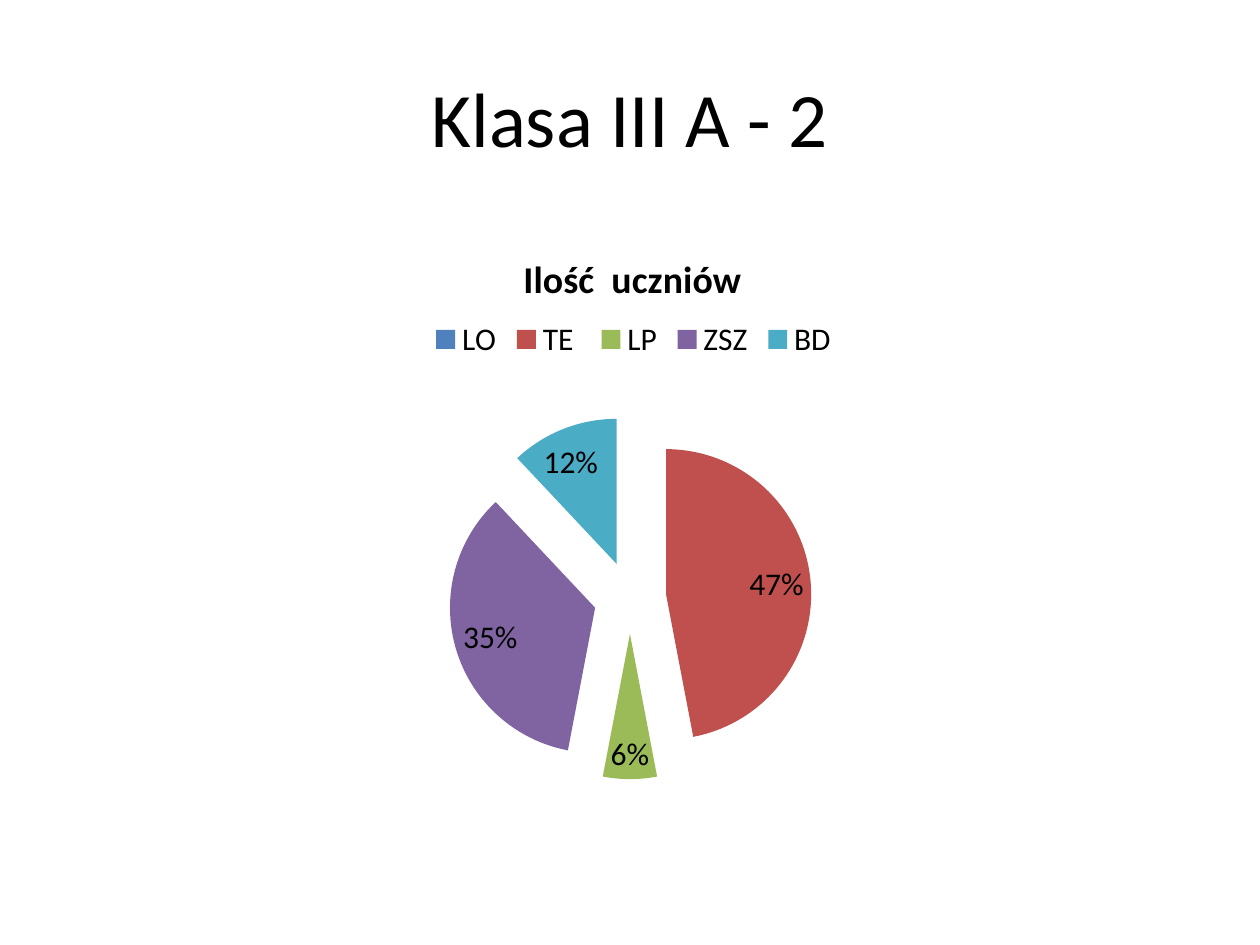
"""Build a title slide with an exploded pie chart of pupils by school type."""
from lxml.etree import SubElement
from pptx import Presentation
from pptx.chart.data import CategoryChartData
from pptx.dml.color import RGBColor
from pptx.enum.chart import XL_CHART_TYPE, XL_LABEL_POSITION, XL_LEGEND_POSITION
from pptx.enum.text import MSO_ANCHOR, PP_ALIGN
from pptx.oxml import parse_xml
from pptx.oxml.ns import nsdecls, qn
from pptx.util import Inches, Pt

HUES = {"LO": "4F81BD", "TE ": "C0504D", "LP": "9BBB59",
        "ZSZ": "8064A2", "BD": "4BACC6", "text": "000000"}
SHARES = {"LO": 0, "TE ": 47, "LP": 6, "ZSZ": 35, "BD": 12}
PLACES = {"c:title": {"xMode": "edge", "yMode": "edge", "x": 0.4, "y": 0.04},
          "c:legend": {"xMode": "edge", "yMode": "edge", "x": 0.32, "y": 0.15},
          "c:plotArea": {"layoutTarget": "inner", "xMode": "edge", "yMode": "edge",
                         "x": 0.34, "y": 0.31, "w": 0.32, "h": 0.59}}


def apply(item, style):
    """Set each format value on the item."""
    for name, value in style.items():
        setattr(item, name, value)


def style_font(font, size, bold=False):
    """Give a font the slide's typeface and text colour."""
    apply(font, {"name": "Calibri", "size": Pt(size), "bold": bold})
    font.color.rgb = RGBColor.from_string(HUES["text"])


deck = Presentation()
apply(deck, {"slide_width": Inches(10), "slide_height": Inches(7.5)})
wide, high = deck.slide_width, deck.slide_height
left, span = int(wide * 0.05), int(wide * 0.9)
slide = deck.slides.add_slide(deck.slide_layouts[5])

title = slide.shapes.title
apply(title, {"left": left, "top": int(high * 0.04),
              "width": span, "height": Inches(1.25)})
frame = title.text_frame
apply(frame, {"text": "Klasa III A - 2", "vertical_anchor": MSO_ANCHOR.MIDDLE})
line = frame.paragraphs[0]
line.alignment = PP_ALIGN.CENTER
style_font(line.runs[0].font, 44)

data = CategoryChartData()
data.categories = list(SHARES)
data.add_series("Series 1", list(SHARES.values()))
chart = slide.shapes.add_chart(
    XL_CHART_TYPE.PIE, left, Inches(1.75), span, int(high * 0.66), data).chart
style_font(chart.font, 18)

chart.has_title = True
head = chart.chart_title
head.include_in_layout = False
head.text_frame.text = "Ilość  uczniów"
style_font(head.text_frame.paragraphs[0].runs[0].font, 21.6, True)

chart.has_legend = True
apply(chart.legend, {"position": XL_LEGEND_POSITION.TOP, "include_in_layout": False})
style_font(chart.legend.font, 18)

plot = chart.plots[0]
plot.vary_by_categories = True
pie = plot.series[0]
pie._element.find(qn("c:tx")).addnext(
    parse_xml(f'<c:explosion {nsdecls("c")} val="25"/>'))
for spot, name in enumerate(SHARES):
    fill = pie.points[spot].format.fill
    fill.solid()
    fill.fore_color.rgb = RGBColor.from_string(HUES[name])

labels = pie.data_labels
apply(labels, {"show_percentage": True, "show_value": False,
               "show_legend_key": False, "number_format": "0%",
               "number_format_is_linked": False,
               "position": XL_LABEL_POSITION.BEST_FIT})
style_font(labels.font, 18)
for spot, share in enumerate(SHARES.values()):
    if not share:
        blank = parse_xml(f'<c:dLbl {nsdecls("c")}/>')
        for tag, value in (("c:idx", spot), ("c:delete", 1)):
            SubElement(blank, qn(tag), val=str(value))
        labels._element.insert(spot, blank)

for tag, place in PLACES.items():
    part = next(chart._chartSpace.iter(qn(tag)))
    for old in part.findall(qn("c:layout")):
        part.remove(old)
    layout = parse_xml(f'<c:layout {nsdecls("c")}/>')
    manual = SubElement(layout, qn("c:manualLayout"))
    for name, value in place.items():
        SubElement(manual, qn(f"c:{name}"), val=str(value))
    if tag == "c:plotArea":
        part.insert(0, layout)
    else:
        part.find(qn("c:overlay")).addprevious(layout)

deck.save("out.pptx")
